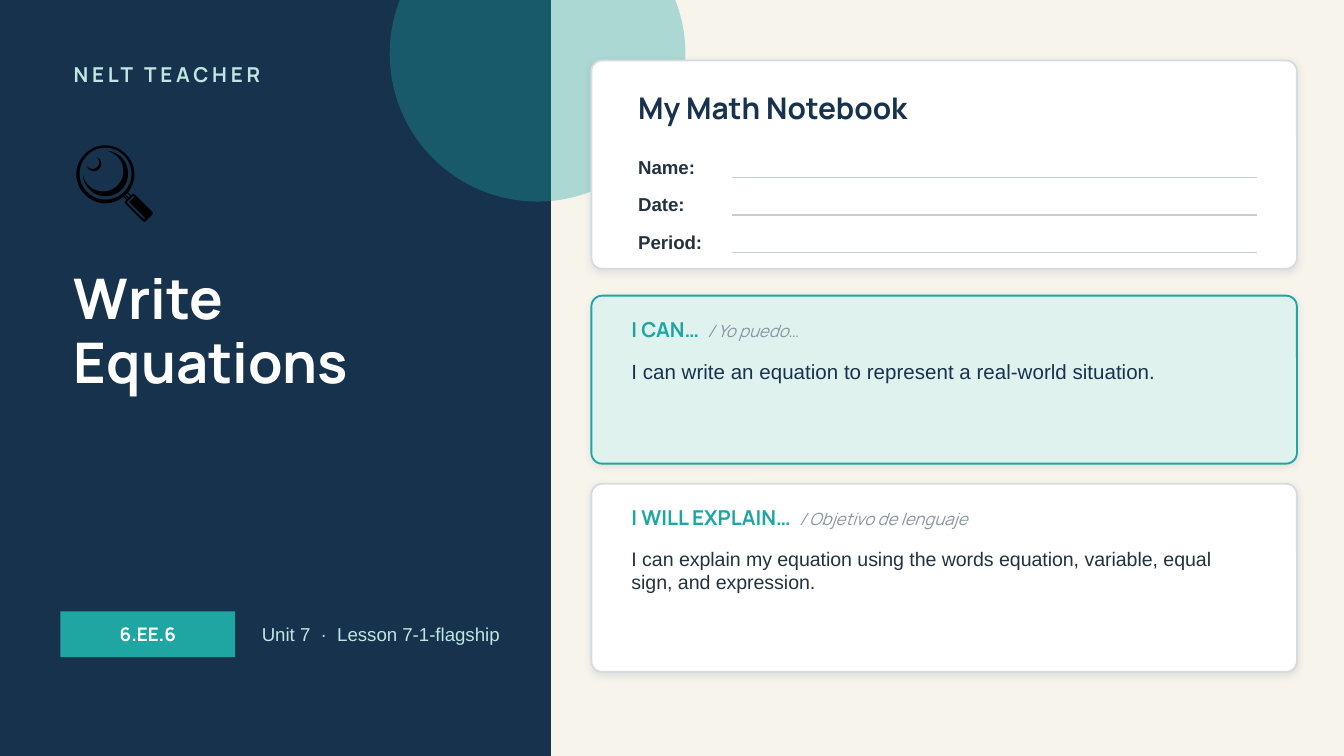
from dataclasses import dataclass

from lxml import etree
from pptx import Presentation
from pptx.dml.color import RGBColor
from pptx.enum import shapes, text
from pptx.oxml import ns
from pptx.util import Inches, Pt

NAVY = RGBColor(0x17, 0x32, 0x4D)
TEAL = RGBColor(0x1F, 0xA6, 0xA2)
MINT = RGBColor(0xBF, 0xE6, 0xE2)
PALE_MINT = RGBColor(0xDF, 0xF2, 0xEE)
CREAM = RGBColor(0xF7, 0xF4, 0xEC)
WHITE = RGBColor(0xFF, 0xFF, 0xFF)
BLACK = RGBColor(0x00, 0x00, 0x00)
INK = RGBColor(0x24, 0x32, 0x3F)
GRAY = RGBColor(0x8A, 0x96, 0xA3)
BORDER = RGBColor(0xD6, 0xDB, 0xDF)
RULE = RGBColor(0xC7, 0xCD, 0xD2)
SHADOW = RGBColor(0x1C, 0x2E, 0x42)

SLIDE_W = 10
SLIDE_H = SLIDE_W * 9 / 16
HEAD, BODY = "Manrope", "Arial"
MIDDLE, TOP = text.MSO_ANCHOR.MIDDLE, text.MSO_ANCHOR.TOP
SHAPE = shapes.MSO_SHAPE


@dataclass
class Box:
    x: float
    y: float
    w: float
    h: float

    def lengths(self):
        return [Inches(v) for v in (self.x, self.y, self.w, self.h)]


@dataclass
class Style:
    size: float
    color: RGBColor
    name: str = BODY
    bold: bool = False
    italic: bool = False


@dataclass
class Goal:
    box: Box
    heading: str
    translation: str
    statement: str
    style: Style
    fill: RGBColor
    line: RGBColor


TRANSLATION = Style(9, GRAY, HEAD, italic=True)
GOAL_HEADING = Style(11, TEAL, HEAD, True)
GOALS = [
    Goal(Box(4.4, 2.2, 5.25, 1.25), "I CAN…  ", "/ Yo puedo…",
         "I can write an equation to represent a real-world situation.",
         Style(11, NAVY), PALE_MINT, TEAL),
    Goal(Box(4.4, 3.6, 5.25, 1.4), "I WILL EXPLAIN…  ", "/ Objetivo de lenguaje",
         "I can explain my equation using the words equation, variable, "
         "equal sign, and expression.",
         Style(10.5, INK), WHITE, BORDER),
]


def format_run(r, style: Style) -> None:
    r.font.size = Pt(style.size)
    r.font.name = style.name
    r.font.color.rgb = style.color
    r.font.bold = style.bold
    r.font.italic = style.italic


def add_text(s, box: Box, content: str, style: Style, anchor=MIDDLE):
    sp = s.shapes.add_textbox(*box.lengths())
    tf = sp.text_frame
    tf.word_wrap = True
    tf.vertical_anchor = anchor
    tf.text = content
    format_run(tf.paragraphs[0].runs[0], style)
    return sp


def add_filled(s, kind, box: Box, fill: RGBColor):
    sp = s.shapes.add_shape(kind, *box.lengths())
    sp.shadow.inherit = False
    sp.fill.solid()
    sp.fill.fore_color.rgb = fill
    sp.line.fill.background()
    return sp


def add_alpha(color, percent: int) -> None:
    etree.SubElement(color, ns.qn("a:alpha"), val=str(percent * 1000))


def add_card(s, box: Box, fill: RGBColor, line: RGBColor) -> None:
    sp = add_filled(s, SHAPE.ROUNDED_RECTANGLE, box, fill)
    sp.adjustments[0] = 0.08 / box.h
    sp.line.color.rgb = line
    sp.line.width = Pt(1)
    effects = sp.element.find(".//" + ns.qn("a:effectLst"))
    shadow = etree.SubElement(
        effects, ns.qn("a:outerShdw"), blurRad=str(Pt(4)), dist=str(Pt(1)),
        dir=str(90 * 60000), algn="bl", rotWithShape="0")
    add_alpha(etree.SubElement(shadow, ns.qn("a:srgbClr"), val=str(SHADOW)), 10)


def add_field(s, label: str, y: float) -> None:
    add_text(s, Box(4.65, y, 0.8, 0.24), label, Style(10, INK, bold=True))
    rule_y = Inches(y + 0.2)
    rule = s.shapes.add_connector(
        shapes.MSO_CONNECTOR.STRAIGHT, Inches(5.45), rule_y, Inches(9.35), rule_y)
    rule.line.color.rgb = RULE
    rule.line.width = Pt(0.75)
    etree.SubElement(rule.element.find(ns.qn("p:spPr")), ns.qn("a:effectLst"))


def add_goal(s, goal: Goal) -> None:
    add_card(s, goal.box, goal.fill, goal.line)
    x, y = goal.box.x + 0.2, goal.box.y
    sp = add_text(s, Box(x, y + 0.1, 4.85, 0.3), goal.heading, GOAL_HEADING)
    r = sp.text_frame.paragraphs[0].add_run()
    r.text = goal.translation
    format_run(r, TRANSLATION)
    add_text(s, Box(x, y + 0.42, 4.85, goal.box.h - 0.47),
             goal.statement, goal.style, TOP)


def add_cover(s) -> None:
    add_filled(s, SHAPE.RECTANGLE, Box(0, 0, 4.1, SLIDE_H), NAVY)
    circle = add_filled(s, SHAPE.OVAL, Box(2.9, -0.7, 2.2, 2.2), TEAL)
    add_alpha(circle.element.find(".//" + ns.qn("a:srgbClr")), 35)

    brand = add_text(s, Box(0.45, 0.4, 3.3, 0.3), "NELT TEACHER",
                     Style(11, MINT, HEAD, True))
    brand.element.find(".//" + ns.qn("a:rPr")).set("spc", "200")
    icon = add_text(s, Box(0.45, 0.85, 1.5, 0.9), "🔍", Style(44, BLACK, "Calibri"))

    title = s.shapes.title
    icon.element.addnext(title.element)
    title.left, title.top, title.width, title.height = Box(0.45, 1.95, 3.3, 1.7).lengths()
    tf = title.text_frame
    tf.text = "Write Equations"
    tf.word_wrap = True
    tf.auto_size = text.MSO_AUTO_SIZE.NONE
    tf.vertical_anchor = TOP
    p = tf.paragraphs[0]
    p.alignment = text.PP_ALIGN.LEFT
    p.line_spacing = 0.95
    p.space_before = Pt(0)
    format_run(p.runs[0], Style(30, WHITE, HEAD, True))

    badge = add_filled(s, SHAPE.RECTANGLE, Box(0.45, 4.55, 1.3, 0.34), TEAL)
    badge.text_frame.text = "6.EE.6"
    badge.text_frame.vertical_anchor = MIDDLE
    p = badge.text_frame.paragraphs[0]
    p.alignment = text.PP_ALIGN.CENTER
    format_run(p.runs[0], Style(10, WHITE, HEAD, True))
    add_text(s, Box(1.85, 4.55, 2.1, 0.34), "Unit 7  ·  Lesson 7-1-flagship",
             Style(10, MINT))


def main() -> None:
    prs = Presentation()
    prs.slide_width, prs.slide_height = Inches(SLIDE_W), Inches(SLIDE_H)
    s = prs.slides.add_slide(prs.slide_layouts[5])
    s.background.fill.solid()
    s.background.fill.fore_color.rgb = CREAM

    add_cover(s)
    add_card(s, Box(4.4, 0.45, 5.25, 1.55), WHITE, BORDER)
    add_text(s, Box(4.65, 0.6, 4.8, 0.4), "My Math Notebook", Style(16, NAVY, HEAD, True))
    for i, label in enumerate(["Name:", "Date:", "Period:"]):
        add_field(s, label, 1.12 + 0.28 * i)
    for goal in GOALS:
        add_goal(s, goal)

    prs.save("out.pptx")


if __name__ == "__main__":
    main()
